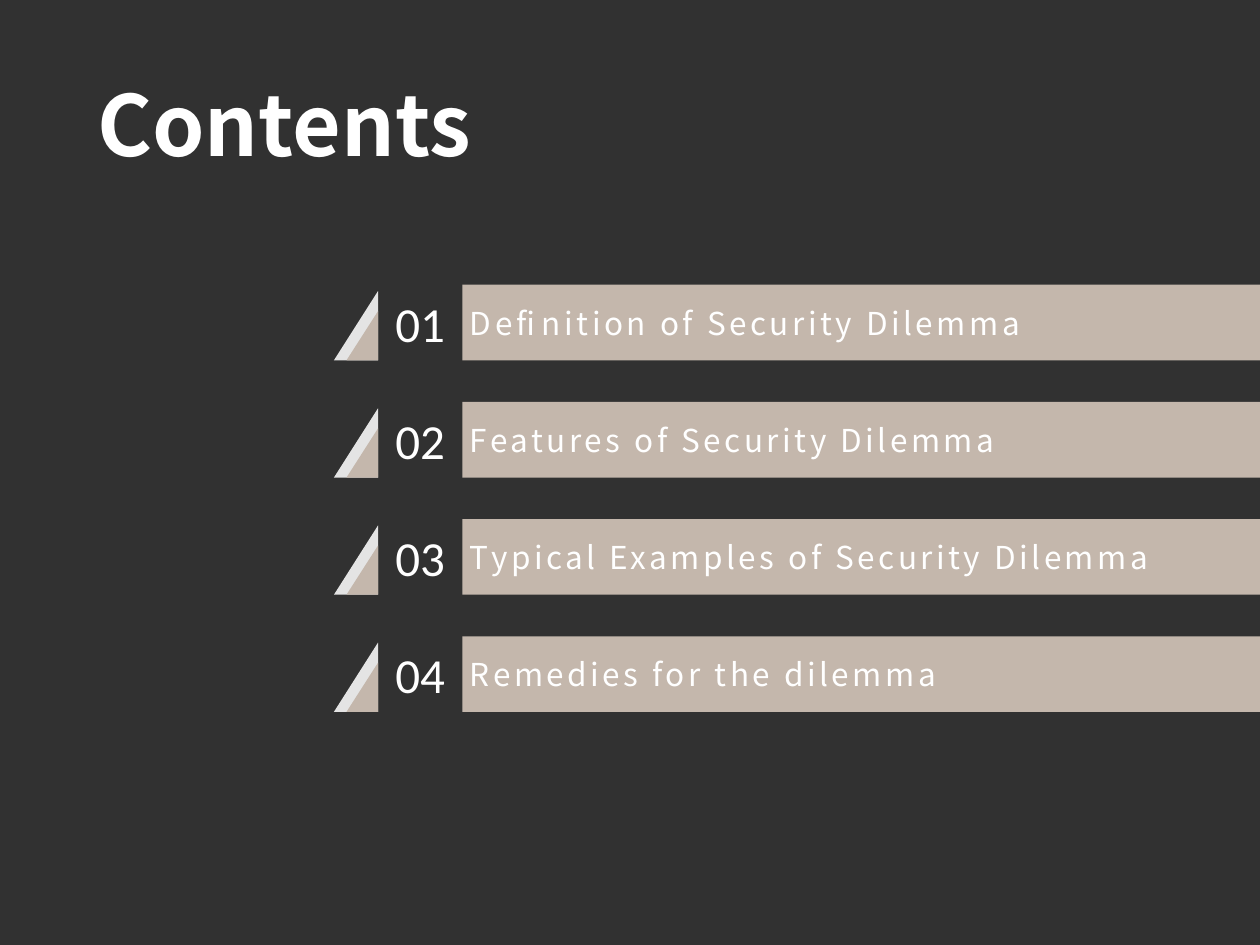
import pptx
import pptx.dml.color
import pptx.enum.text
import pptx.util

CHARCOAL = pptx.dml.color.RGBColor(0x31, 0x31, 0x31)
WHITE = pptx.dml.color.RGBColor(0xFF, 0xFF, 0xFF)
SILVER = pptx.dml.color.RGBColor(0xE4, 0xE4, 0xE4)
SAND = pptx.dml.color.RGBColor(0xC4, 0xB7, 0xAC)
HEADING_FONT = "Noto Sans CJK SC"
NUMBER_FONT = "Calibri"

WIDTH, HEIGHT = 10, 7.5
FIRST_TOP, ROW_PITCH, ROW_HEIGHT = 2.26, 0.93, 0.6
FOLD_RIGHT, BAR_LEFT = 3, 3.67
SILVER_LEFT, SAND_LEFT = 2.65, 2.75
SILVER_DROP, SAND_DROP = 0.05, 0.21
ENTRIES = (
    "Definition of Security Dilemma",
    "Features of Security Dilemma",
    "Typical Examples of Security Dilemma",
    "Remedies for the dilemma",
)


def write_text(box, text, *, size, font=HEADING_FONT, bold=False,
               align=pptx.enum.text.PP_ALIGN.CENTER, inset=0, spacing=0):
    """Write one vertically centred line of white text into a box."""
    frame = box.text_frame
    frame.word_wrap = True
    frame.vertical_anchor = pptx.enum.text.MSO_ANCHOR.MIDDLE
    frame.margin_left = pptx.util.Inches(inset)
    frame.margin_top = frame.margin_right = frame.margin_bottom = 0
    para = frame.paragraphs[0]
    para.alignment = align
    span = para.add_run()
    span.text = text
    span.font.name = font
    span.font.size = pptx.util.Pt(size)
    span.font.bold = bold
    span.font.color.rgb = WHITE
    if spacing:
        span.font._element.set("spc", str(spacing * 100))


def add_label(page, text, left, top, width, height, **text_format):
    """Add a text box at a place given in inches."""
    box = page.shapes.add_textbox(*map(pptx.util.Inches, (left, top, width, height)))
    write_text(box, text, **text_format)


def add_outline(page, contours, color):
    """Add one filled shape made of closed contours given in inches."""
    scaled = [[(pptx.util.Inches(x), pptx.util.Inches(y)) for x, y in contour]
              for contour in contours]
    builder = page.shapes.build_freeform(*scaled[0][0])
    for index, (start, *others) in enumerate(scaled):
        if index:
            builder.move_to(*start)
        builder.add_line_segments(others, close=True)
    shape = builder.convert_to_shape()
    shape.shadow.inherit = False
    shape.fill.solid()
    shape.fill.fore_color.rgb = color
    shape.line.fill.background()
    return shape


def fold(left, top, bottom):
    """Return the corners of a right triangle that ends at the fold line."""
    return [(FOLD_RIGHT, top), (FOLD_RIGHT, bottom), (left, bottom)]


def add_entry(page, row, text):
    """Add one numbered contents row with its folded ribbon."""
    top = FIRST_TOP + row * ROW_PITCH
    bottom = top + ROW_HEIGHT
    bar = [(BAR_LEFT, top), (WIDTH, top), (WIDTH, bottom), (BAR_LEFT, bottom)]
    add_outline(page, [fold(SILVER_LEFT, top + SILVER_DROP, bottom)], SILVER)
    ribbon = add_outline(page, [fold(SAND_LEFT, top + SAND_DROP, bottom), bar], SAND)
    write_text(ribbon, text, size=18, align=pptx.enum.text.PP_ALIGN.LEFT,
               inset=0.98, spacing=2)
    add_label(page, f"{row + 1:02}", FOLD_RIGHT, top, BAR_LEFT - FOLD_RIGHT,
              ROW_HEIGHT, size=28, font=NUMBER_FONT)


def main():
    """Build the contents slide and save it."""
    deck = pptx.Presentation()
    deck.slide_width = pptx.util.Inches(WIDTH)
    deck.slide_height = pptx.util.Inches(HEIGHT)
    page = deck.slides.add_slide(deck.slide_layouts[6])
    page.background.fill.solid()
    page.background.fill.fore_color.rgb = CHARCOAL
    add_label(page, "Contents", 0.61, 0.62, 3.29, 0.71, size=48, bold=True)
    for row, text in enumerate(ENTRIES):
        add_entry(page, row, text)
    deck.save("out.pptx")


if __name__ == "__main__":
    main()
